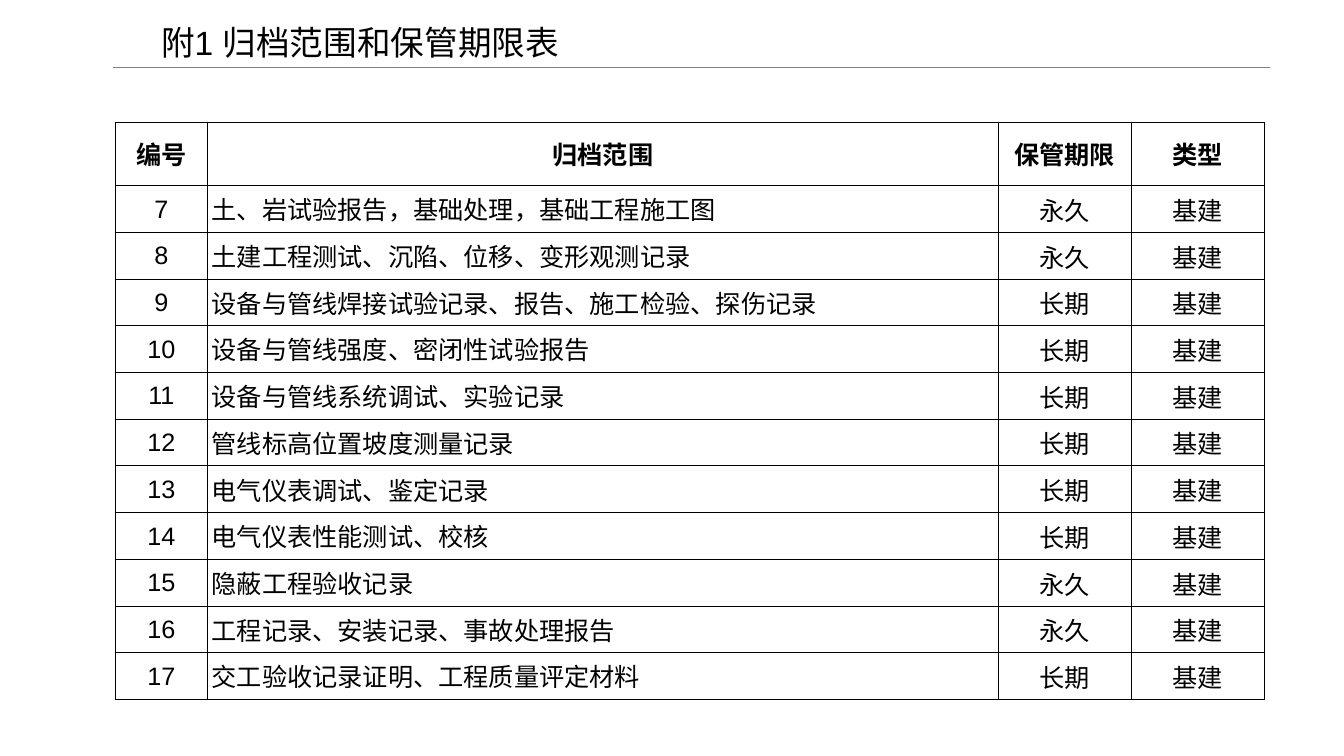
from dataclasses import dataclass

from lxml.etree import SubElement
from pptx import Presentation
from pptx.dml.color import RGBColor as Color
from pptx.enum.shapes import MSO_CONNECTOR as Connector
from pptx.enum.text import MSO_ANCHOR as Anchor, PP_ALIGN as Align
from pptx.oxml.ns import qn
from pptx.util import Inches, Pt


@dataclass(frozen=True)
class Theme:
    font: str = "Arial"
    ink: str = "000000"
    rule: str = "808080"
    title_size: float = 24
    table_size: float = 18
    rule_width: float = 0.75
    border_width: float = 0.5


HEADINGS = ["编号", "归档范围", "保管期限", "类型"]
COLUMN_WIDTHS = [0.92, 7.84, 1.32, 1.32]
HEADING_HEIGHT, TABLE_HEIGHT = 0.63, 5.73
FIRST_NUMBER = 7
CATEGORY = "基建"
RECORDS = [
    ("土、岩试验报告，基础处理，基础工程施工图", "永久"),
    ("土建工程测试、沉陷、位移、变形观测记录", "永久"),
    ("设备与管线焊接试验记录、报告、施工检验、探伤记录", "长期"),
    ("设备与管线强度、密闭性试验报告", "长期"),
    ("设备与管线系统调试、实验记录", "长期"),
    ("管线标高位置坡度测量记录", "长期"),
    ("电气仪表调试、鉴定记录", "长期"),
    ("电气仪表性能测试、校核", "长期"),
    ("隐蔽工程验收记录", "永久"),
    ("工程记录、安装记录、事故处理报告", "永久"),
    ("交工验收记录证明、工程质量评定材料", "长期"),
]

# Cell margins: left, top, right, bottom
HEADING_MARGINS = (0, 0, 0, 0)
SCOPE_MARGINS = (0.04, 0, 0.04, 0)
VALUE_MARGINS = (0.01, 0.01, 0.01, 0)


def apply_format(target, values):
    for name, value in values.items():
        setattr(target, name, value)


class SlideBuilder:
    def __init__(self, slide, theme):
        self.slide = slide
        self.theme = theme

    def add_text(self, paragraph, text, size, bold=False, **paragraph_format):
        run = paragraph.add_run()
        run.text = text
        apply_format(paragraph, paragraph_format)
        apply_format(run.font, {"name": self.theme.font, "size": Pt(size), "bold": bold})
        run.font.color.rgb = Color.from_string(self.theme.ink)

    def add_title(self, text, left, top, width, height):
        box = self.slide.shapes.add_textbox(*map(Inches, (left, top, width, height)))
        frame = box.text_frame
        apply_format(frame, {"word_wrap": True, "vertical_anchor": Anchor.MIDDLE})
        self.add_text(frame.paragraphs[0], text, self.theme.title_size, line_spacing=0.9)

    def add_rule(self, left, right, top):
        ends = map(Inches, (left, top, right, top))
        rule = self.slide.shapes.add_connector(Connector.STRAIGHT, *ends)
        rule.line.color.rgb = Color.from_string(self.theme.rule)
        rule.line.width = Pt(self.theme.rule_width)
        SubElement(rule._element.spPr, qn("a:effectLst"))

    def add_borders(self, cell):
        properties = cell._tc.get_or_add_tcPr()
        for side in ("lnL", "lnR", "lnT", "lnB"):
            line = SubElement(properties, qn(f"a:{side}"), w=str(Pt(self.theme.border_width)))
            fill = SubElement(line, qn("a:solidFill"))
            SubElement(fill, qn("a:srgbClr"), val=self.theme.ink)

    def fill_cell(self, cell, text, margins, align, bold):
        sides = ("margin_left", "margin_top", "margin_right", "margin_bottom")
        apply_format(cell, dict(zip(sides, map(Inches, margins))))
        cell.vertical_anchor = Anchor.MIDDLE
        self.add_borders(cell)
        # The fill has to follow the borders in the cell properties
        cell.fill.background()
        paragraph = cell.text_frame.paragraphs[0]
        self.add_text(paragraph, text, self.theme.table_size, bold, alignment=align)

    def add_table(self, rows, left, top):
        size = (sum(COLUMN_WIDTHS), TABLE_HEIGHT)
        frame = self.slide.shapes.add_table(
            len(rows), len(HEADINGS), *map(Inches, (left, top, *size)))
        table = frame.table
        apply_format(table, {"first_row": False, "horz_banding": False})
        for column, width in zip(table.columns, COLUMN_WIDTHS):
            column.width = Inches(width)
        record_height = (TABLE_HEIGHT - HEADING_HEIGHT) / (len(rows) - 1)
        for row_index, texts in enumerate(rows):
            is_heading = row_index == 0
            table.rows[row_index].height = Inches(HEADING_HEIGHT if is_heading else record_height)
            for column_index, text in enumerate(texts):
                margins, align = VALUE_MARGINS, Align.CENTER
                if is_heading:
                    margins = HEADING_MARGINS
                elif column_index == 1:
                    margins, align = SCOPE_MARGINS, Align.LEFT
                cell = table.cell(row_index, column_index)
                self.fill_cell(cell, text, margins, align, is_heading)


def main():
    presentation = Presentation()
    apply_format(presentation, {"slide_width": Inches(13.33), "slide_height": Inches(7.5)})
    slide = presentation.slides.add_slide(presentation.slide_layouts[6])
    builder = SlideBuilder(slide, Theme())

    # Heading and the rule below it
    builder.add_rule(left=1.12, right=12.6, top=0.67)
    builder.add_title("附1 归档范围和保管期限表", 1.5, 0.14, 11.06, 0.6)

    # Archive scope and retention periods
    records = [(str(number), scope, period, CATEGORY)
               for number, (scope, period) in enumerate(RECORDS, FIRST_NUMBER)]
    builder.add_table([HEADINGS, *records], left=1.14, top=1.21)

    presentation.save("out.pptx")


if __name__ == "__main__":
    main()
